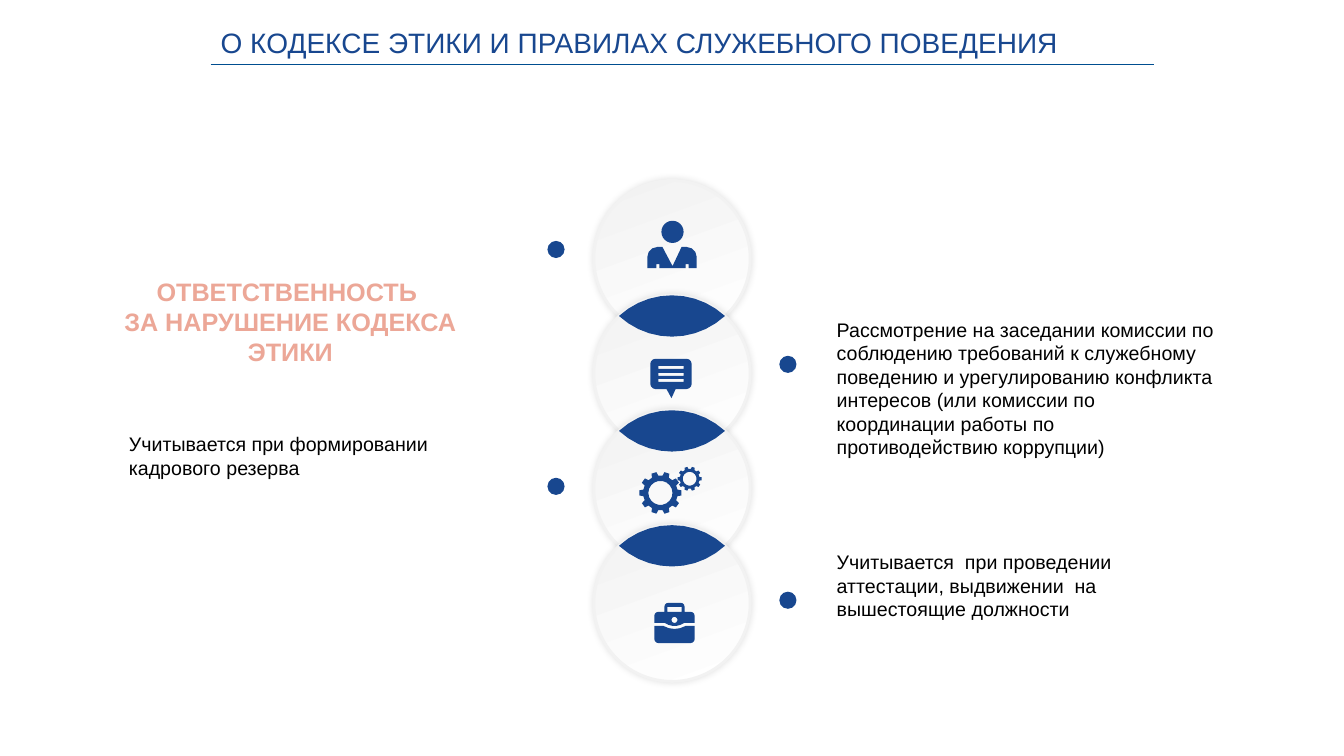
from math import cos, radians, sin

from lxml import etree
from pptx import Presentation
from pptx.dml.color import RGBColor
from pptx.enum.shapes import MSO_CONNECTOR, MSO_SHAPE
from pptx.enum.text import MSO_AUTO_SIZE, PP_ALIGN
from pptx.oxml import parse_xml
from pptx.oxml.ns import nsdecls, qn
from pptx.util import Inches, Pt

OVAL = MSO_SHAPE.OVAL
STRAIGHT = MSO_CONNECTOR.STRAIGHT
FIT_SHAPE = MSO_AUTO_SIZE.SHAPE_TO_FIT_TEXT
LEFT, CENTER, JUSTIFY = PP_ALIGN.LEFT, PP_ALIGN.CENTER, PP_ALIGN.JUSTIFY

BLUE = RGBColor(0x18, 0x47, 0x8F)
RULE_BLUE = RGBColor(0x00, 0x4E, 0x90)
SALMON = RGBColor(0xEC, 0xA7, 0x97)
PALE = RGBColor(0xF2, 0xF2, 0xF2)
WHITE = RGBColor(0xFF, 0xFF, 0xFF)
BLACK = RGBColor(0, 0, 0)

SOFT_SHADOW = (
    f'<a:effectLst {nsdecls("a")}><a:outerShdw blurRad="63500" dist="0" dir="0">'
    '<a:srgbClr val="000000"><a:alpha val="11000"/></a:srgbClr>'
    '</a:outerShdw></a:effectLst>'
)


def arc(center_x, center_y, radius, start, end, step=30):
    """Return points on a circle from one angle to another, in degrees."""
    count = round((end - start) / step)
    angles = [radians(start + (end - start) * i / count) for i in range(count + 1)]
    return [(center_x + radius * cos(a), center_y + radius * sin(a)) for a in angles]


def rectangle(left, top, width, height):
    """Return the corners of a rectangle."""
    right, bottom = left + width, top + height
    return [(left, top), (right, top), (right, bottom), (left, bottom)]


def paint_blue(shape):
    """Give a shape a plain blue fill without line or shadow."""
    shape.shadow.inherit = False
    shape.fill.solid()
    shape.fill.fore_color.rgb = BLUE
    shape.line.fill.background()


def add_outline(slide, left, top, outer, *holes):
    """Draw a blue closed outline with holes, placed relative to a corner."""
    builder = None
    for contour in (outer, *holes):
        points = [(Inches(left + x), Inches(top + y)) for x, y in contour]
        if builder is None:
            builder = slide.shapes.build_freeform(*points[0])
        else:
            builder.move_to(*points[0])
        builder.add_line_segments(points[1:], close=True)
    paint_blue(builder.convert_to_shape())


def add_disc(slide, left, top, size):
    """Draw a blue disc and return it."""
    disc = slide.shapes.add_shape(OVAL, Inches(left), Inches(top), Inches(size), Inches(size))
    paint_blue(disc)
    return disc


def add_text(slide, box, text, size, color, align=LEFT, bold=False):
    """Write one paragraph in a wrapping text box."""
    frame = slide.shapes.add_textbox(*map(Inches, box)).text_frame
    frame.word_wrap = True
    frame.auto_size = FIT_SHAPE
    paragraph = frame.paragraphs[0]
    paragraph.text = text
    paragraph.alignment = align
    paragraph.font.name = "Arial"
    paragraph.font.size = Pt(size)
    paragraph.font.bold = bold
    paragraph.font.color.rgb = color


def add_title(slide, left, top, width, height):
    """Write the title over its rule."""
    rule_y = Inches(top + height)
    rule = slide.shapes.add_connector(STRAIGHT, Inches(left), rule_y, Inches(left + 9.36), rule_y)
    rule.line.color.rgb = RULE_BLUE
    rule.line.width = Pt(1)
    etree.SubElement(rule._element.spPr, qn("a:effectLst"))
    add_text(slide, (left, top, width, height),
             "О КОДЕКСЕ ЭТИКИ И ПРАВИЛАХ СЛУЖЕБНОГО ПОВЕДЕНИЯ", 20, BLUE, JUSTIFY)


def add_link(slide, left, top, size):
    """Draw one shaded round link."""
    link = add_disc(slide, left, top, size)
    link.fill.gradient()
    link.fill.gradient_angle = 110
    for stop, color in zip(link.fill.gradient_stops, (WHITE, PALE)):
        stop.color.rgb = color
    link.line.color.rgb = PALE
    link.line.width = Pt(2)
    properties = link._element.spPr
    properties.replace(properties.find(qn("a:effectLst")), parse_xml(SOFT_SHADOW))


def add_chain(slide, left, top, size, height, count):
    """Draw the overlapping links and the blue lenses between them."""
    radius = size / 2
    pitch = (height - size) / (count - 1)
    lens = (arc(radius, radius, radius, 47.5, 132.5, 8.5)
            + arc(radius, radius + pitch, radius, 227.5, 312.5, 8.5))
    for index in range(count):
        add_link(slide, left, top + index * pitch, size)
        if index:
            add_outline(slide, left, top + (index - 1) * pitch, lens)


def add_person(slide, left, top):
    """Draw the person icon."""
    add_disc(slide, left + 0.14, top, 0.22)
    body = [(0, 0.47), *arc(0.1, 0.36, 0.1, 180, 270), (0.15, 0.26), (0.25, 0.45),
            (0.34, 0.26), *arc(0.39, 0.36, 0.1, 270, 360), (0.49, 0.47)]
    for cuff in (0.38, 0.09):
        body += [(cuff + 0.03, 0.47), (cuff + 0.03, 0.43), (cuff, 0.43), (cuff, 0.47)]
    add_outline(slide, left, top, body)


def add_message(slide, left, top):
    """Draw the speech bubble icon with three text bars."""
    bubble = [*arc(0.05, 0.05, 0.05, 180, 270), *arc(0.36, 0.05, 0.05, 270, 360),
              *arc(0.36, 0.25, 0.05, 0, 90), *arc(0.05, 0.25, 0.05, 90, 180)]
    bars = [rectangle(0.08, y, 0.25, 0.03) for y in (0.07, 0.14, 0.2)]
    add_outline(slide, left, top, [(0.15, 0.28), (0.26, 0.28), (0.21, 0.39)])
    add_outline(slide, left, top, bubble, *bars)


def add_gear(slide, center_x, center_y, radius):
    """Draw a ten-toothed gear with a round hole."""
    teeth = []
    for middle in range(0, 360, 36):
        for turn, reach in ((-11, 0.82), (-7, 1), (7, 1), (11, 0.82)):
            angle = radians(middle + turn)
            teeth.append((radius * reach * cos(angle), radius * reach * sin(angle)))
    add_outline(slide, center_x, center_y, teeth, arc(0, 0, radius * 0.57, 0, 360, 20))


def add_gears(slide, left, top):
    """Draw the large and the small gear."""
    add_gear(slide, left + 0.2, top + 0.26, 0.21)
    add_gear(slide, left + 0.49, top + 0.12, 0.12)


def add_briefcase(slide, left, top):
    """Draw the briefcase icon in two parts."""
    lower = [(0, 0.23), *reversed(arc(0.2, 0.04, 0.22, 60, 120, 15)), (0.4, 0.23),
             *arc(0.36, 0.36, 0.04, 0, 90), *arc(0.04, 0.36, 0.04, 90, 180)]
    upper = [(0, 0.2), *arc(0.04, 0.13, 0.04, 180, 270), (0.1, 0.09),
             *arc(0.14, 0.04, 0.04, 180, 270), *arc(0.26, 0.04, 0.04, 270, 360),
             (0.3, 0.09), *arc(0.36, 0.13, 0.04, 270, 360), (0.4, 0.2),
             *arc(0.2, 0.06, 0.17, 55, 125, 14)]
    handle = rectangle(0.13, 0.04, 0.14, 0.05)
    clasp = arc(0.2, 0.17, 0.03, 0, 360)
    add_outline(slide, left, top, lower)
    add_outline(slide, left, top, upper, handle, clasp)


def add_measures(slide):
    """Write the heading, the measures and their marker dots."""
    add_text(slide, (8.2, 3.1, 3.99, 1.28),
             "Рассмотрение на заседании комиссии по соблюдению требований к служебному "
             "поведению и урегулированию конфликта интересов (или комиссии по координации "
             "работы по противодействию коррупции)", 14, BLACK)
    add_text(slide, (8.2, 5.41, 3.99, 0.81),
             "Учитывается  при проведении аттестации, выдвижении  на вышестоящие должности",
             14, BLACK)
    add_text(slide, (1.18, 4.24, 3.76, 0.57),
             "Учитывается при формировании кадрового резерва", 14, BLACK)
    for left, top in ((5.43, 2.39), (7.73, 3.53), (5.43, 4.74), (7.73, 5.87)):
        add_disc(slide, left, top, 0.17)
    add_text(slide, (1, 2.69, 3.76, 1.01),
             "ОТВЕТСТВЕННОСТЬ \vЗА НАРУШЕНИЕ КОДЕКСА ЭТИКИ", 18, SALMON, CENTER, True)


def main():
    """Build and save the slide."""
    presentation = Presentation()
    presentation.slide_width = Inches(13.33)
    presentation.slide_height = Inches(7.5)
    slide = presentation.slides.add_slide(presentation.slide_layouts[6])
    add_title(slide, 2.09, 0.2, 8.88, 0.44)
    add_chain(slide, 5.89, 1.79, 1.55, 4.97, 4)
    add_person(slide, 6.42, 2.19)
    add_gears(slide, 6.35, 4.63)
    add_briefcase(slide, 6.49, 5.98)
    add_message(slide, 6.45, 3.56)
    add_measures(slide)
    presentation.save("out.pptx")


if __name__ == "__main__":
    main()
